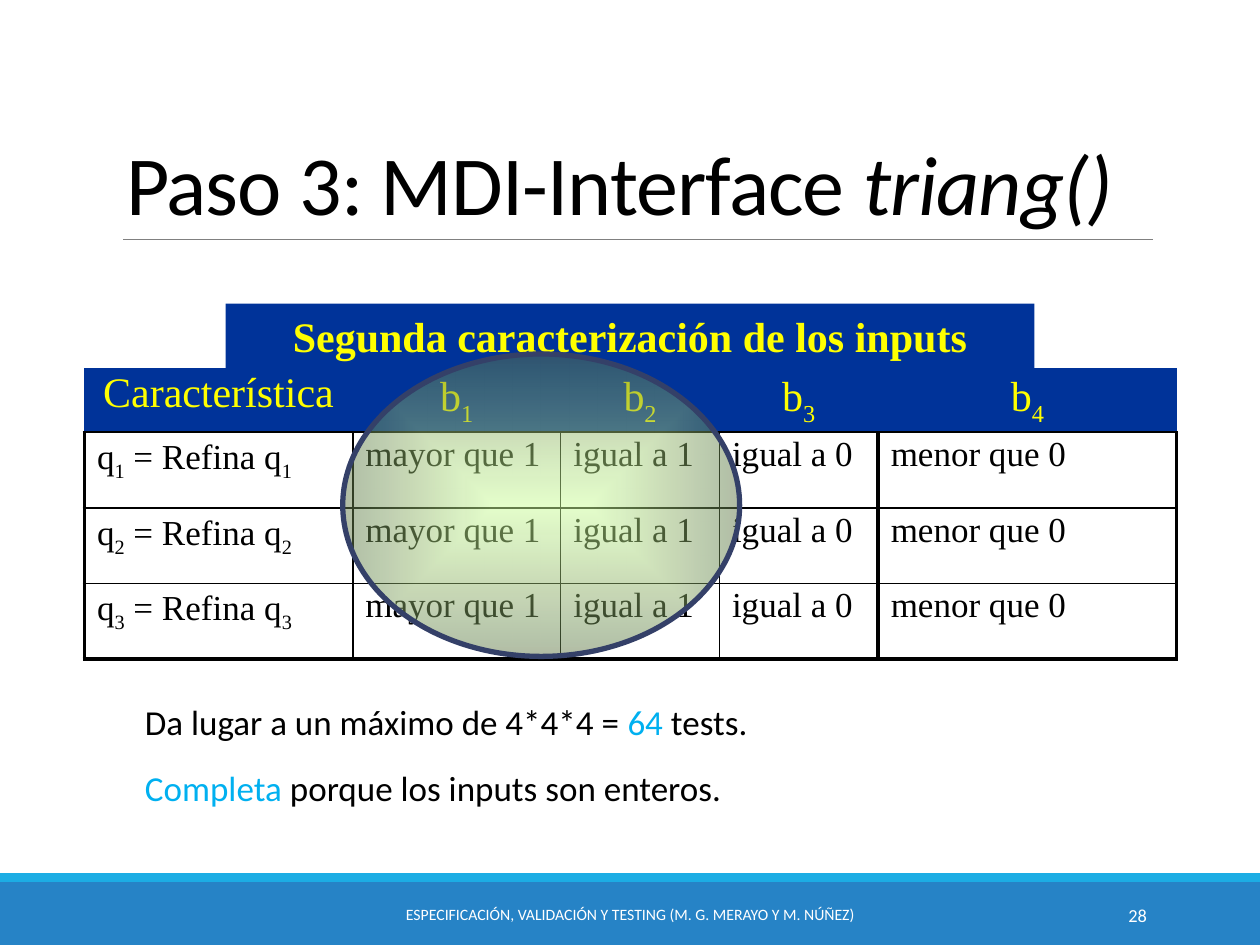
import lxml.etree
import pptx
import pptx.dml.color
import pptx.enum.shapes
import pptx.enum.text
import pptx.oxml
import pptx.oxml.ns
import pptx.util

WIDTH, HEIGHT = 10, 7.5
SANS, SERIF = "Calibri", "Times New Roman"
BLACK, WHITE, NAVY, YELLOW, ACCENT = "000000", "FFFFFF", "003399", "FFFF00", "00B0F0"
COLUMNS = [2.13, 1.65, 1.26, 1.26, 2.37]
ROWS = [0.5, 0.6, 0.6, 0.6]
TABLE_LEFT, TABLE_TOP = 0.67, 2.92
NAMESPACE = 'xmlns:a="http://schemas.openxmlformats.org/drawingml/2006/main"'
NO_STYLE = "{2D5ABB26-0587-4C30-8999-92F81FD0307C}"
ALIGN = pptx.enum.text.PP_ALIGN
ANCHOR = pptx.enum.text.MSO_ANCHOR
SHAPE = pptx.enum.shapes.MSO_SHAPE


def rgb(value):
    """Return the colour for a hex string."""
    return pptx.dml.color.RGBColor.from_string(value)


def box(left, top, width, height):
    """Return a position and size in inches as lengths."""
    return [pptx.util.Inches(length) for length in (left, top, width, height)]


def write(paragraph, pieces, font, size, color, align=ALIGN.LEFT, spacing=1.0):
    """Write (text, changes) pieces as the formatted runs of a paragraph."""
    paragraph.alignment = align
    paragraph.line_spacing = spacing
    for text, changes in pieces:
        run = paragraph.add_run()
        run.text = text
        run.font.name = font
        run.font.size = pptx.util.Pt(size)
        run.font.color.rgb = rgb(changes.get("color", color))
        run.font.bold = changes.get("bold", False)
        run.font.italic = changes.get("italic", False)
        for name in ("baseline", "spc"):
            if name in changes:
                run.font._element.set(name, str(changes[name]))


def indexed(letter, index):
    """Return the pieces of a letter with a subscript."""
    return [(letter, {}), (str(index), {"baseline": -25000})]


def add_block(slide, kind, place, color):
    """Add a plain filled shape."""
    shape = slide.shapes.add_shape(kind, *box(*place))
    shape.shadow.inherit = False
    shape.fill.solid()
    shape.fill.fore_color.rgb = rgb(color)
    shape.line.fill.background()
    return shape


def add_rule(slide, left, right, top):
    """Add the thin line below the title."""
    left, top, right, bottom = box(left, top, right, top)
    line = slide.shapes.add_connector(
        pptx.enum.shapes.MSO_CONNECTOR.STRAIGHT, left, top, right, bottom)
    line.line.color.rgb = rgb("808080")
    line.line.width = pptx.util.Pt(0.5)
    lxml.etree.SubElement(line._element.spPr, pptx.oxml.ns.qn("a:effectLst"))


def add_footer(slide, text, left, width, size, align):
    """Add a text in the footer band."""
    frame = slide.shapes.add_textbox(*box(left, 7.06, width, 0.4)).text_frame
    frame.word_wrap = True
    frame.vertical_anchor = ANCHOR.MIDDLE
    write(frame.paragraphs[0], [(text, {})], SANS, size, WHITE, align)


def set_title(slide, pieces):
    """Place and fill the title."""
    title = slide.shapes.title
    title.left, title.top, title.width, title.height = box(0.9, 0.31, 8.04, 1.59)
    title.text_frame.auto_size = pptx.enum.text.MSO_AUTO_SIZE.NONE
    title.text_frame.vertical_anchor = ANCHOR.BOTTOM
    write(title.text_frame.paragraphs[0], pieces, SANS, 48, BLACK, spacing=0.85)


def set_body(slide, lines):
    """Place the body and fill it with unbulleted lines."""
    body = slide.placeholders[1]
    body.left, body.top, body.width, body.height = box(1.05, 5.28, 8.15, 1.18)
    frame = body.text_frame
    frame.auto_size = pptx.enum.text.MSO_AUTO_SIZE.NONE
    frame.margin_top = pptx.util.Inches(0.34)
    for number, pieces in enumerate(lines):
        paragraph = frame.add_paragraph() if number else frame.paragraphs[0]
        write(paragraph, pieces, SANS, 20, BLACK, spacing=0.8)
        paragraph.space_before = pptx.util.Pt(19 if number else 0)
        properties = paragraph._element.get_or_add_pPr()
        properties.set("marL", "0")
        properties.set("indent", "0")
        lxml.etree.SubElement(properties, pptx.oxml.ns.qn("a:buNone"))


def set_borders(cell, widths):
    """Draw black borders, given as side and width in points."""
    properties = cell._tc.get_or_add_tcPr()
    for position, (side, width) in enumerate(widths.items()):
        properties.insert(position, pptx.oxml.parse_xml(
            f'<a:ln{side} {NAMESPACE} w="{int(width * 12700)}">'
            f'<a:solidFill><a:srgbClr val="{BLACK}"/></a:solidFill></a:ln{side}>'))


def add_table(slide, rows):
    """Add the table of characteristics and blocks."""
    place = box(TABLE_LEFT, TABLE_TOP, sum(COLUMNS), sum(ROWS))
    table = slide.shapes.add_table(len(ROWS), len(COLUMNS), *place).table
    table.horz_banding = False
    table._tbl.tblPr.find(pptx.oxml.ns.qn("a:tableStyleId")).text = NO_STYLE
    for column, width in zip(table.columns, COLUMNS):
        column.width = pptx.util.Inches(width)
    last_row, last_column = len(ROWS) - 1, len(COLUMNS) - 1
    for y, pieces_row in enumerate(rows):
        table.rows[y].height = pptx.util.Inches(ROWS[y])
        for x, pieces in enumerate(pieces_row):
            cell = table.cell(y, x)
            cell.fill.solid()
            cell.fill.fore_color.rgb = rgb(WHITE if y else NAVY)
            size, color, align = (20, BLACK, ALIGN.LEFT) if y else (24, YELLOW, ALIGN.CENTER)
            write(cell.text_frame.paragraphs[0], pieces, SERIF, size, color, align, 0.9)
            if y:
                set_borders(cell, {
                    "L": 2.25 if x in (0, last_column) else 1,
                    "R": 2.25 if x >= last_column - 1 else 1,
                    "T": 1,
                    "B": 2.25 if y == last_row else 1})
            else:
                set_borders(cell, {"B": 1})


def add_highlight(slide, place):
    """Add the translucent ellipse over the valid blocks."""
    ellipse = add_block(slide, SHAPE.OVAL, place, "CCFF99")
    ellipse.line.color.rgb = rgb("344068")
    ellipse.line.width = pptx.util.Pt(3)
    stops = "".join(
        f'<a:gs pos="{position}"><a:srgbClr val="{color}"><a:alpha val="{alpha}"/></a:srgbClr></a:gs>'
        for position, color, alpha in ((0, "CCFF99", 50000), (100000, "5E7647", 48000)))
    gradient = pptx.oxml.parse_xml(
        f'<a:gradFill {NAMESPACE} rotWithShape="1"><a:gsLst>{stops}</a:gsLst><a:path path="shape">'
        '<a:fillToRect l="50000" t="50000" r="50000" b="50000"/></a:path></a:gradFill>')
    properties = ellipse._element.spPr
    properties.replace(properties.find(pptx.oxml.ns.qn("a:solidFill")), gradient)


def main():
    """Build the slide and save it."""
    presentation = pptx.Presentation()
    presentation.slide_width = pptx.util.Inches(WIDTH)
    presentation.slide_height = pptx.util.Inches(HEIGHT)
    slide = presentation.slides.add_slide(presentation.slide_layouts[1])

    add_block(slide, SHAPE.RECTANGLE, (0, 7, WIDTH, 0.5), "2683C6")
    add_block(slide, SHAPE.RECTANGLE, (0, 6.93, WIDTH, 0.07), "1CADE4")
    add_rule(slide, 0.98, 9.15, 1.9)
    add_footer(slide, "ESPECIFICACIÓN, VALIDACIÓN Y TESTING (M. G. MERAYO Y M. NÚÑEZ)",
               3.02, 3.96, 9, ALIGN.CENTER)
    add_footer(slide, "28", 8.12, 1.08, 10.5, ALIGN.RIGHT)

    set_title(slide, [("Paso 3: MDI-Interface ", {"spc": -50}),
                      ("triang()", {"spc": -50, "italic": True})])
    caption = add_block(slide, SHAPE.RECTANGLE, (1.79, 2.41, 6.42, 0.51), NAVY)
    write(caption.text_frame.paragraphs[0],
          [("Segunda caracterización de los inputs", {"bold": True})],
          SERIF, 24, YELLOW, ALIGN.CENTER)

    blocks = ["mayor que 1", "igual a 1", "igual a 0", "menor que 0"]
    header = [[("Característica", {})]] + [indexed("b", index) for index in range(1, 5)]
    rows = [[indexed("q", index) + indexed(" = Refina q", index)]
            + [[(block, {})] for block in blocks] for index in range(1, 4)]
    add_table(slide, [header] + rows)
    add_highlight(slide, (2.72, 2.81, 3.15, 2.4))
    set_body(slide, [
        [("Da lugar a un máximo de 4*4*4 = ", {}), ("64 ", {"color": ACCENT}), ("tests.", {})],
        [("Completa", {"color": ACCENT}), (" porque los inputs son enteros.", {})]])
    presentation.save("out.pptx")


if __name__ == "__main__":
    main()
